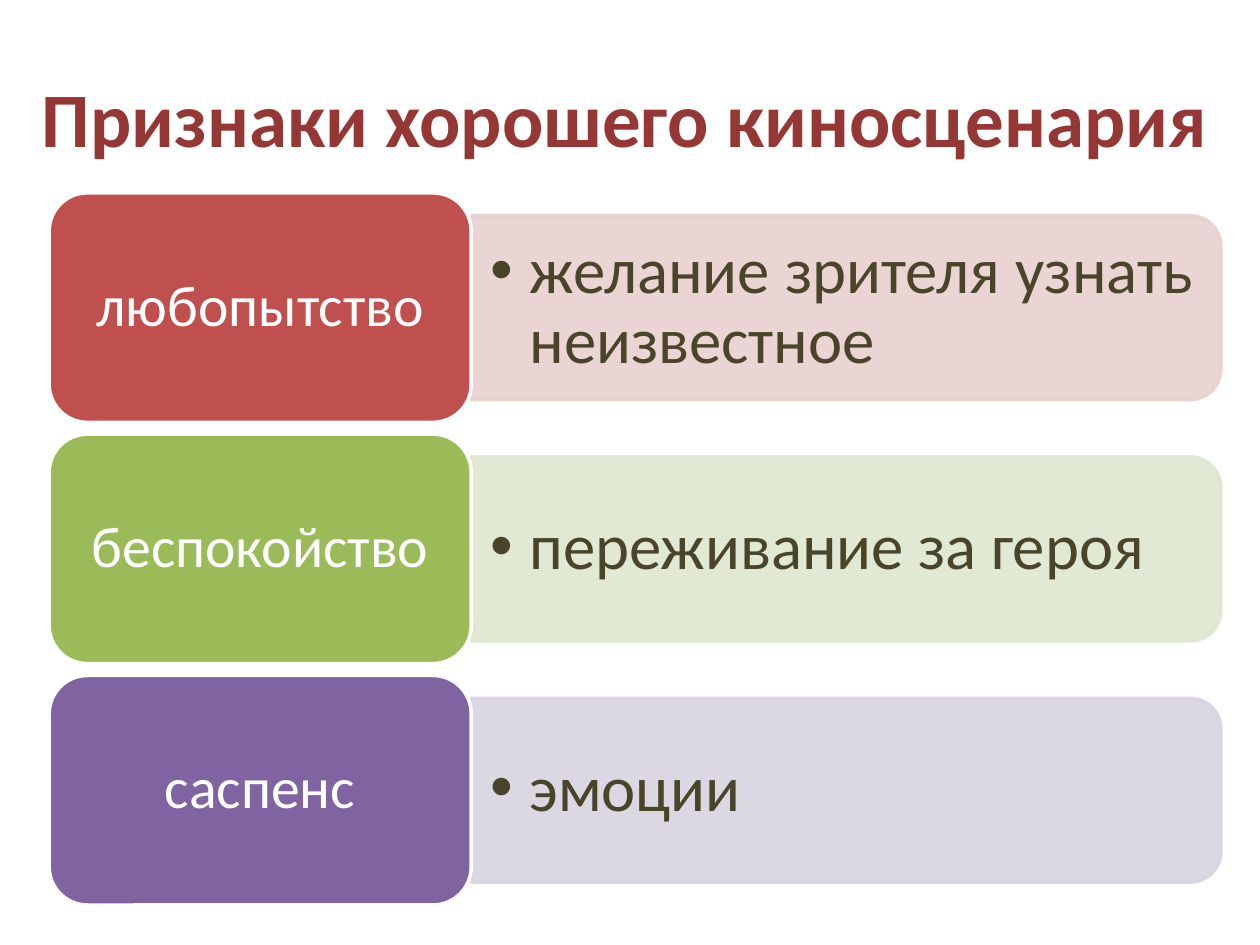
import pptx
import pptx.dml.color
import pptx.enum.shapes
import pptx.enum.text
import pptx.oxml.ns
import pptx.util
from lxml import etree

Pt = pptx.util.Pt
RGBColor = pptx.dml.color.RGBColor
MSO_SHAPE = pptx.enum.shapes.MSO_SHAPE
PP_ALIGN = pptx.enum.text.PP_ALIGN
qn = pptx.oxml.ns.qn

WHITE = RGBColor(0xFF, 0xFF, 0xFF)
TITLE_RED = RGBColor(0x95, 0x37, 0x35)
DETAIL_BROWN = RGBColor(0x4A, 0x45, 0x2A)
RED, PALE_RED = RGBColor(0xC0, 0x50, 0x4D), RGBColor(0xE8, 0xD0, 0xD0)
GREEN, PALE_GREEN = RGBColor(0x9B, 0xBB, 0x59), RGBColor(0xDE, 0xE7, 0xD1)
PURPLE, PALE_PURPLE = RGBColor(0x80, 0x64, 0xA2), RGBColor(0xD8, 0xD3, 0xE0)

FEATURES = [
    ("любопытство", "желание зрителя узнать неизвестное", RED, PALE_RED),
    ("беспокойство", "переживание за героя", GREEN, PALE_GREEN),
    ("саспенс", "эмоции", PURPLE, PALE_PURPLE),
]

FIRST_ROW_CENTER = 175.8
ROW_PITCH = 137.9
NAME_LEFT, NAME_WIDTH, NAME_HEIGHT = 28.1, 241.2, 131.2
BAND_LEFT = NAME_LEFT + NAME_WIDTH
BAND_LENGTH, BAND_THICKNESS = 428.4, 105.1
DETAIL_WIDTH, DETAIL_HEIGHT = 423.4, 95


def set_text(frame, text, size, color, align, bold=False):
    frame.word_wrap = True
    frame.vertical_anchor = pptx.enum.text.MSO_ANCHOR.MIDDLE
    paragraph = frame.paragraphs[0]
    paragraph.alignment = align
    run = paragraph.add_run()
    run.text = text
    run.font.name = "Calibri"
    run.font.size = Pt(size)
    run.font.bold = bold
    run.font.color.rgb = color
    return paragraph


def set_insets(frame, horizontal, vertical):
    frame.margin_left = frame.margin_right = Pt(horizontal)
    frame.margin_top = frame.margin_bottom = Pt(vertical)


def add_panel(slide, preset, left, top, width, height, fill, outline):
    panel = slide.shapes.add_shape(preset, Pt(left), Pt(top), Pt(width), Pt(height))
    panel.shadow.inherit = False
    panel.fill.solid()
    panel.fill.fore_color.rgb = fill
    panel.line.color.rgb = outline
    panel.line.width = Pt(2)
    return panel


def add_band(slide, center, color):
    """Add the pale band, a top-rounded shape turned so its round end faces right."""
    left = BAND_LEFT + (BAND_LENGTH - BAND_THICKNESS) / 2
    band = add_panel(slide, MSO_SHAPE.ROUND_2_SAME_RECTANGLE, left,
                     center - BAND_LENGTH / 2, BAND_THICKNESS, BAND_LENGTH, color, color)
    band.rotation = 90
    for tint in band.element.spPr.iter(qn("a:srgbClr")):
        etree.SubElement(tint, qn("a:alpha"), val="90000")


def add_detail(slide, center, text):
    detail = slide.shapes.add_textbox(Pt(BAND_LEFT), Pt(center - DETAIL_HEIGHT / 2),
                                      Pt(DETAIL_WIDTH), Pt(DETAIL_HEIGHT))
    set_insets(detail.text_frame, 10.8, 5.6)
    paragraph = set_text(detail.text_frame, text, 37, DETAIL_BROWN, PP_ALIGN.JUSTIFY)
    paragraph.level = 1
    paragraph.line_spacing = 0.9
    properties = paragraph._p.get_or_add_pPr()
    indent = Pt(22.5)
    properties.set("marL", str(indent))
    properties.set("indent", str(-indent))
    etree.SubElement(properties, qn("a:buFont"), typeface="Arial")
    etree.SubElement(properties, qn("a:buChar"), char="•")


def add_name(slide, center, text, color):
    name = add_panel(slide, MSO_SHAPE.ROUNDED_RECTANGLE, NAME_LEFT,
                     center - NAME_HEIGHT / 2, NAME_WIDTH, NAME_HEIGHT, color, WHITE)
    set_insets(name.text_frame, 10, 5)
    paragraph = set_text(name.text_frame, text, 33, WHITE, PP_ALIGN.CENTER)
    paragraph.line_spacing = 0.9


def add_title(slide, text):
    title = slide.shapes.title
    title.left, title.top, title.width, title.height = Pt(11.3), Pt(21.6), Pt(692), Pt(90)
    set_text(title.text_frame, text, 44, TITLE_RED, PP_ALIGN.CENTER, bold=True)


def main():
    presentation = pptx.Presentation()
    presentation.slide_width, presentation.slide_height = Pt(720), Pt(540)
    slide = presentation.slides.add_slide(presentation.slide_layouts[5])
    add_title(slide, "Признаки хорошего киносценария")
    for row, (name, detail, color, pale_color) in enumerate(FEATURES):
        center = FIRST_ROW_CENTER + row * ROW_PITCH
        add_band(slide, center, pale_color)
        add_detail(slide, center, detail)
        add_name(slide, center, name, color)
    presentation.save("out.pptx")


if __name__ == "__main__":
    main()
